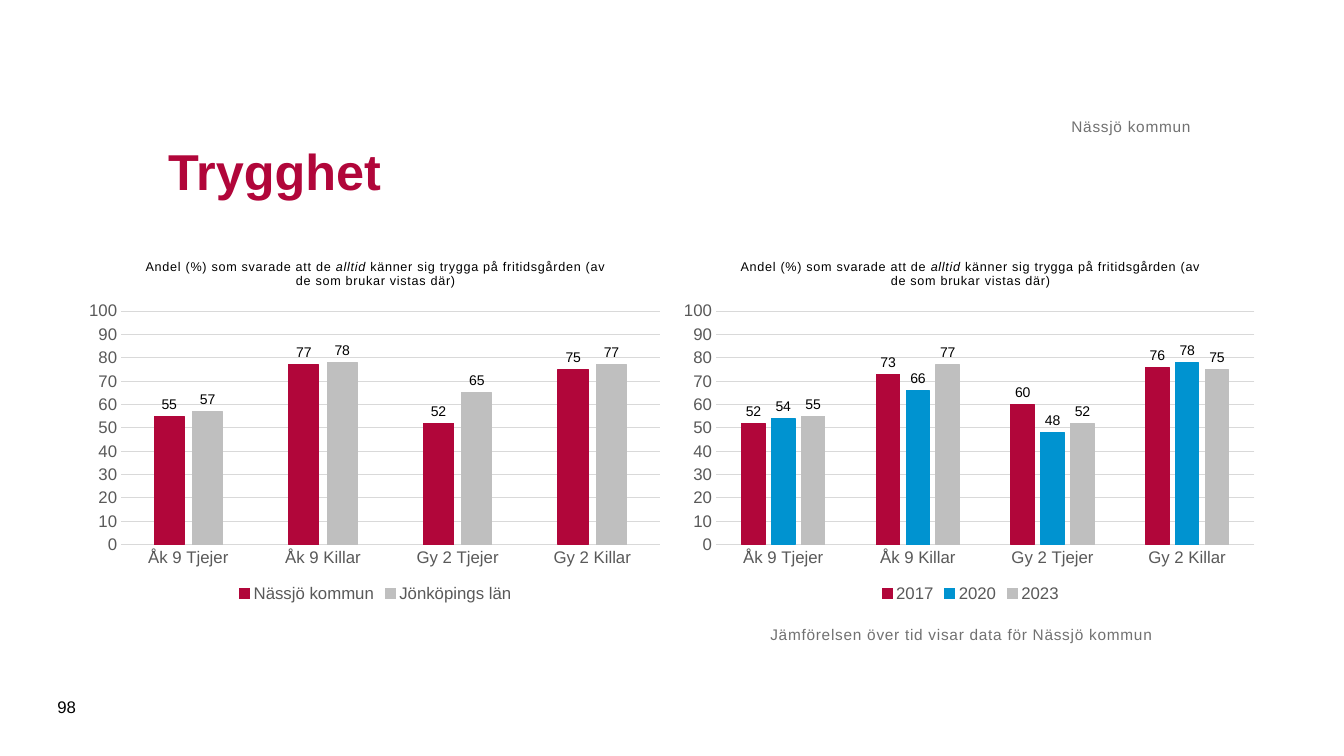
from lxml import etree
from pptx import Presentation
from pptx.chart.data import CategoryChartData as ChartData
from pptx.dml.color import RGBColor as RGB
from pptx.enum.chart import XL_CHART_TYPE as Kind, XL_LABEL_POSITION as Spot
from pptx.enum.chart import XL_LEGEND_POSITION as Side, XL_TICK_MARK as Tick
from pptx.enum.text import MSO_ANCHOR as Anchor, PP_ALIGN as Align
from pptx.oxml import parse_xml
from pptx.oxml.ns import nsdecls, qn
from pptx.util import Inches, Pt

COLORS = {
    "red": "B1063A", "blue": "0093D0", "silver": "BFBFBF", "grid": "D9D9D9",
    "axis": "595959", "note": "717171", "black": "000000",
}
FONT = "Arial"
FORMAT = "#,##0;#,##0"
GROUPS = ["Åk 9 Tjejer", "Åk 9 Killar", "Gy 2 Tjejer", "Gy 2 Killar"]
TITLE = [
    ("Andel (%) som svarade att de ", False),
    ("alltid", True),
    (" känner sig trygga på fritidsgården (av de som brukar vistas där)", False),
]
REGION = [
    ("Nässjö kommun", [55, 77, 52, 75], "red"),
    ("Jönköpings län", [57, 78, 65, 77], "silver"),
]
YEARS = [
    ("2017", [52, 73, 60, 76], "red"),
    ("2020", [54, 66, 48, 78], "blue"),
    ("2023", [55, 77, 52, 75], "silver"),
]
PLOT = {"x": 0.07, "y": 0.19, "w": 0.91, "h": 0.64}


def color(name):
    return RGB.from_string(COLORS[name])


def style(font, size, name, bold=False):
    font.name = FONT
    font.size = Pt(size)
    font.bold = bold
    font.color.rgb = color(name)


def space(run):
    run.font._element.set("spc", "50")


def draw_line(line, name):
    line.color.rgb = color(name)
    line.width = Pt(0.75)


def add_label(slide, box, text, size, tone, bold=False, anchor=Anchor.TOP,
              align=Align.LEFT, spaced=False):
    frame = slide.shapes.add_textbox(*map(Inches, box)).text_frame
    frame.text = text
    frame.word_wrap = True
    frame.vertical_anchor = anchor
    part = frame.paragraphs[0]
    part.alignment = align
    style(part.runs[0].font, size, tone, bold)
    if spaced:
        space(part.runs[0])
        frame.margin_left = frame.margin_right = 0
        frame.margin_top = frame.margin_bottom = 0


def place_plot(chart):
    area = chart._chartSpace.chart.plotArea
    for old in area.findall(qn("c:layout")):
        area.remove(old)
    layout = parse_xml(f"<c:layout {nsdecls('c')}><c:manualLayout/></c:layout>")
    parts = [("layoutTarget", "inner"), ("xMode", "edge"), ("yMode", "edge")]
    for tag, value in parts + list(PLOT.items()):
        etree.SubElement(layout[0], qn(f"c:{tag}")).set("val", str(value))
    area.insert(0, layout)


def set_title(chart):
    chart.has_title = True
    chart.chart_title.include_in_layout = False
    part = chart.chart_title.text_frame.paragraphs[0]
    for text, slant in TITLE:
        run = part.add_run()
        run.text = text
        style(run.font, 9, "black")
        run.font.italic = slant
        space(run)


def set_axes(chart):
    for axis in (chart.category_axis, chart.value_axis):
        axis.major_tick_mark = axis.minor_tick_mark = Tick.NONE
        style(axis.tick_labels.font, 12, "axis")
    draw_line(chart.category_axis.format.line, "grid")
    scale = chart.value_axis
    scale.minimum_scale, scale.maximum_scale, scale.major_unit = 0, 100, 10
    scale.format.line.fill.background()
    scale.tick_labels.number_format = FORMAT
    scale.tick_labels.number_format_is_linked = False
    draw_line(scale.major_gridlines.format.line, "grid")


def add_bars(slide, box, rows):
    data = ChartData()
    data.categories = GROUPS
    for name, values, tone in rows:
        data.add_series(name, values)
    chart = slide.shapes.add_chart(
        Kind.COLUMN_CLUSTERED, *map(Inches, box), data).chart
    style(chart.font, 10, "black")
    set_title(chart)
    set_axes(chart)
    place_plot(chart)
    chart.has_legend = True
    chart.legend.position = Side.BOTTOM
    chart.legend.include_in_layout = False
    style(chart.legend.font, 12, "axis")
    plot = chart.plots[0]
    plot.gap_width, plot.overlap = 219, -27
    plot.vary_by_categories = False
    for bars, (name, values, tone) in zip(plot.series, rows):
        bars.format.fill.solid()
        bars.format.fill.fore_color.rgb = color(tone)
        draw_line(bars.format.line, tone)
        labels = bars.data_labels
        labels.show_value = True
        labels.position = Spot.OUTSIDE_END
        labels.number_format = FORMAT
        labels.number_format_is_linked = False
        style(labels.font, 10, "black")


def add_charts(slide, left, top, width, height):
    pitch = width + 0.03
    for i, rows in enumerate((REGION, YEARS)):
        add_bars(slide, (left + i * pitch, top, width, height), rows)


def add_head(slide, left, top, width):
    add_label(slide, (left, top + 0.36, width, 1.42), "Trygghet", 36, "red",
              bold=True, anchor=Anchor.MIDDLE)
    add_label(slide, (left, top, width, 0.73), "Nässjö kommun", 11, "note",
              anchor=Anchor.BOTTOM, align=Align.RIGHT, spaced=True)


def add_foot(slide, left, top):
    add_label(slide, (left + 7.17, top, 5.31, 0.94),
              "Jämförelsen över tid visar data för Nässjö kommun", 11, "note",
              spaced=True)
    add_label(slide, (left, top + 0.61, 0.57, 0.4), "98", 12, "black",
              anchor=Anchor.MIDDLE)


def main():
    deck = Presentation()
    deck.slide_width, deck.slide_height = Inches(13.33), Inches(7.5)
    slide = deck.slides.add_slide(deck.slide_layouts[6])
    add_charts(slide, 0.79, 2.4, 5.87, 3.62)
    add_head(slide, 1.57, 0.62, 10.24)
    add_foot(slide, 0.47, 6.2)
    deck.save("out.pptx")


if __name__ == "__main__":
    main()
